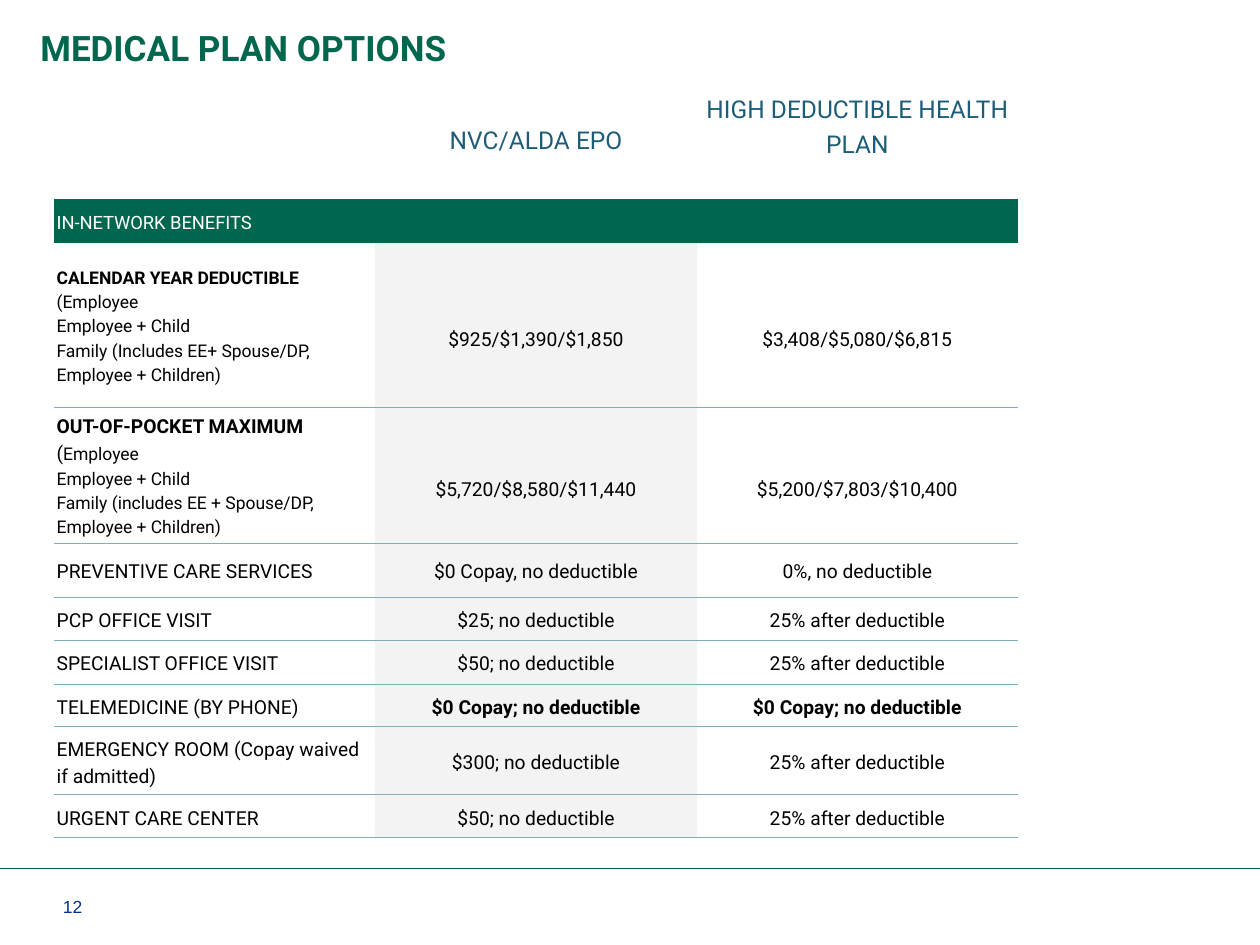
from lxml.etree import SubElement
from pptx import Presentation
from pptx.dml.color import RGBColor
from pptx.enum.shapes import MSO_CONNECTOR as Link
from pptx.enum.text import MSO_ANCHOR as Anchor, PP_ALIGN as Align
from pptx.oxml.ns import qn
from pptx.util import Inches, Pt

GREEN, TEAL, RULE = "00664D", "1E5D77", "81AFB9"
GRAY, WHITE, BLACK, NAVY = "F3F3F3", "FFFFFF", "000000", "003087"
GAP = 0.21  # height of one spare text line in a cell

HEADS = ["", "NVC/ALDA EPO", "HIGH DEDUCTIBLE HEALTH PLAN"]
BAND = "IN-NETWORK BENEFITS"
AFTER = "25% after deductible"
FREE = "$0 Copay; no deductible"
CHILD = "Employee + Child"
ROWS = [
    ([[("CALENDAR YEAR DEDUCTIBLE", 10, True)], [("(Employee", 10, False)],
      [(CHILD, 10, False)],
      [("Family (Includes EE+ Spouse/DP, Employee + Children)", 10, False)]],
     "$925/$1,390/$1,850", "$3,408/$5,080/$6,815"),
    ([[("OUT-OF-POCKET MAXIMUM ", 11, True), ("(", 11, False), ("Employee", 10, False)],
      [(CHILD, 10, False)],
      [("Family (includes EE + Spouse/DP, Employee + Children)", 10, False)]],
     "$5,720/$8,580/$11,440", "$5,200/$7,803/$10,400"),
    ("PREVENTIVE CARE SERVICES", "$0 Copay, no deductible", "0%, no deductible"),
    ("PCP OFFICE VISIT", "$25; no deductible", AFTER),
    ("SPECIALIST OFFICE VISIT", "$50; no deductible", AFTER),
    ("TELEMEDICINE (BY PHONE)", FREE, FREE),
    ("EMERGENCY ROOM (Copay waived if admitted)", "$300; no deductible", AFTER),
    ("URGENT CARE CENTER", "$50; no deductible", AFTER),
]
HIGHS = [0.97, 0.35, 1.3, 1.08, 0.43, 0.34, 0.35, 0.34, 0.54, 0.34]


def tint(code):
    return RGBColor.from_string(code)


class Deck:
    """Holds the slide in work and the shared text style."""

    def __init__(self, slide, font="Roboto", lead=1.19):
        self.slide, self.font, self.lead = slide, font, lead

    def style(self, font, size, color, bold=False, name=None):
        font.name, font.size, font.bold = name or self.font, Pt(size), bold
        font.color.rgb = tint(color)

    def text(self, words, box, size, color, bold=False, name=None, anchor=Anchor.TOP):
        frame = self.slide.shapes.add_textbox(*map(Inches, box)).text_frame
        frame.word_wrap, frame.vertical_anchor = True, anchor
        frame.margin_left = frame.margin_right = 0
        frame.text = words
        self.style(frame.paragraphs[0].font, size, color, bold, name)

    def line(self, left, right, y, color):
        line = self.slide.shapes.add_connector(
            Link.STRAIGHT, *map(Inches, (left, y, right, y)))
        line.line.color.rgb, line.line.width = tint(color), Pt(0.5)
        SubElement(line._element.spPr, qn("a:effectLst"))

    def table(self, left, top, wide, highs, cols):
        frame = self.slide.shapes.add_table(
            len(highs), cols, *map(Inches, (left, top, wide * cols, sum(highs))))
        grid = frame.table
        grid.first_row = grid.horz_banding = False
        for col in grid.columns:
            col.width = Inches(wide)
        for row, high in zip(grid.rows, highs):
            row.height = Inches(high)
        return grid

    def edges(self, cell, shown):
        """Draw the named sides (T, B) and clear the others."""
        prop = cell._tc.get_or_add_tcPr()
        for side in "LRTB":
            edge = SubElement(prop, qn("a:ln" + side), w=str(Pt(0.5)))
            if side in shown:
                fill = SubElement(edge, qn("a:solidFill"))
                SubElement(fill, qn("a:srgbClr"), val=RULE)
            else:
                SubElement(edge, qn("a:noFill"))

    def cell(self, cell, words, size=11, color=BLACK, bold=False, align=Align.LEFT,
             fill=None, edges="", top=0, bottom=0, right=0.02):
        """Fill a cell with a string or with paragraphs of (text, size, bold) runs."""
        self.edges(cell, edges)
        if fill:
            cell.fill.solid()
            cell.fill.fore_color.rgb = tint(fill)
        else:
            cell.fill.background()
        cell.vertical_anchor = Anchor.MIDDLE
        cell.margin_left, cell.margin_right = Inches(0.02), Inches(right)
        cell.margin_top, cell.margin_bottom = Inches(top), Inches(bottom)
        paras = [[(words, size, bold)]] if isinstance(words, str) else words
        frame = cell.text_frame
        for i, runs in enumerate(paras):
            para = frame.add_paragraph() if i else frame.paragraphs[0]
            para.alignment, para.line_spacing = align, self.lead
            for part, points, heavy in runs:
                run = para.add_run()
                run.text = part
                font = para.font if len(runs) == 1 else run.font
                self.style(font, points, color, heavy)


def main():
    show = Presentation()
    show.slide_width, show.slide_height = Inches(10), Inches(7.5)
    deck = Deck(show.slides.add_slide(show.slide_layouts[6]))
    deck.line(0, 10, 6.89, GREEN)
    deck.text("12", (0.5, 7.08, 0.54, 0.25), 10, NAVY, name="Arial", anchor=Anchor.BOTTOM)
    deck.text("MEDICAL PLAN OPTIONS", (0.32, 0.16, 8.92, 1.08), 20, GREEN, bold=True)

    grid = deck.table(0.43, 0.61, 2.55, HIGHS, len(HEADS))
    for c, head in enumerate(HEADS):
        deck.cell(grid.cell(0, c), head, 14, TEAL, align=Align.CENTER,
                  bottom=GAP if c == 2 else 0)
        deck.cell(grid.cell(1, c), "" if c else BAND, 10.5, WHITE, fill=GREEN)
    for r, (label, *values) in enumerate(ROWS, 2):
        sides = "B" if r == 2 else "TB"
        tall = not isinstance(label, str)
        deck.cell(grid.cell(r, 0), label, edges=sides, right=0 if tall else 0.02)
        for c, (value, fill) in enumerate(zip(values, (GRAY, WHITE)), 1):
            deck.cell(grid.cell(r, c), value, bold=value == FREE, align=Align.CENTER,
                      fill=fill, edges=sides, top=GAP if tall else 0)
    show.save("out.pptx")


if __name__ == "__main__":
    main()
